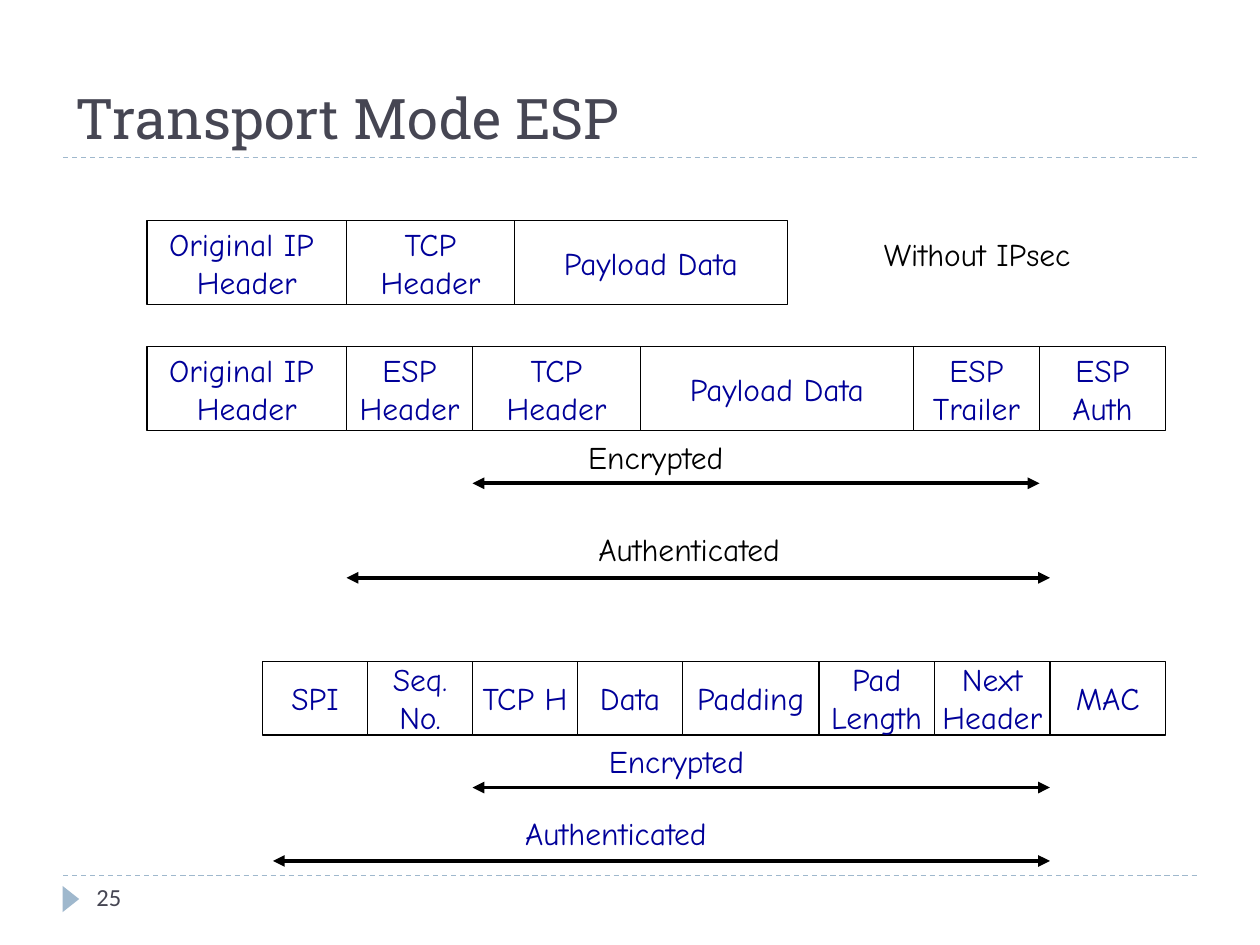
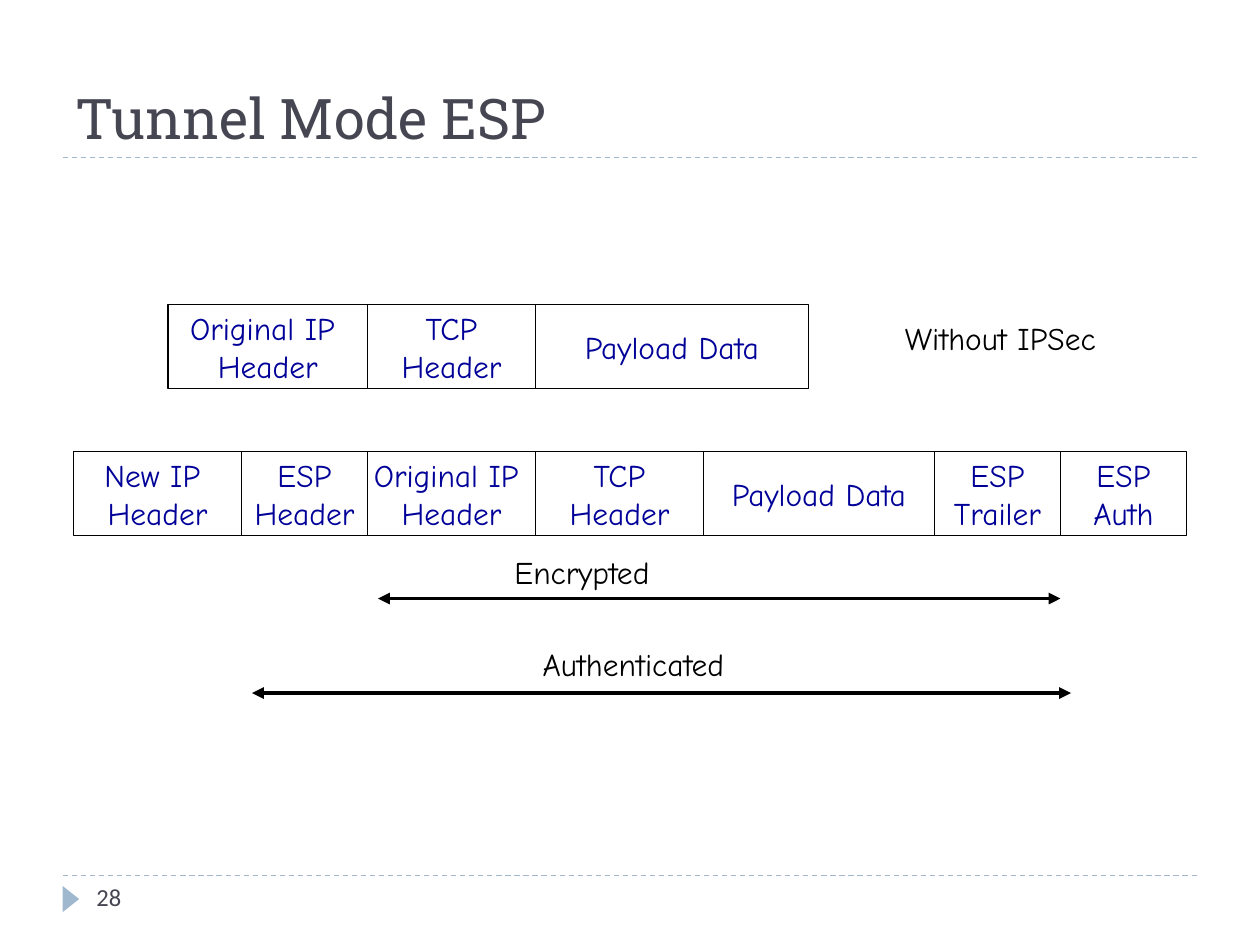
from lxml import etree
from pptx import Presentation
from pptx.dml.color import RGBColor
from pptx.enum import dml, shapes, text
from pptx.oxml import ns
from pptx.util import Pt

WHITE = RGBColor(0xFF, 0xFF, 0xFF)
BLACK = RGBColor(0x00, 0x00, 0x00)
FIELD_BLUE = RGBColor(0x00, 0x00, 0x99)
SLATE = RGBColor(0x46, 0x46, 0x53)
PALE_BLUE = RGBColor(0x9F, 0xB8, 0xCD)

TITLE_FONT = "Roboto Slab"
NUMBER_FONT = "Calibri"
BODY_FONT = "Comic Neue"

ORIGINAL_IP = "Original IP \nHeader"
TCP = "TCP\nHeader"
ESP_HEADER = "ESP\nHeader"
PAYLOAD = "Payload Data"
PLAIN_PACKET = [(ORIGINAL_IP, 114), (TCP, 96), (PAYLOAD, 156)]
ESP_END = [("ESP\nTrailer", 72), ("ESP\nAuth", 72)]

# rows: left, top, height, [(field, width)]
# labels: text, left, top, width, colour
# spans: start x, end x, y
SLIDES = [
    {
        "title": "Transport Mode ESP",
        "number": "25",
        "rows": [
            (84, 126, 48, PLAIN_PACKET),
            (84, 198, 48, [(ORIGINAL_IP, 114), (ESP_HEADER, 72), (TCP, 96),
                           (PAYLOAD, 156), *ESP_END]),
            (150, 378, 42, [("SPI", 60), ("Seq.\nNo.", 60), ("TCP H", 60),
                            ("Data", 60), ("Padding", 78), ("Pad\nLength", 66),
                            ("Next\nHeader", 66), ("MAC", 66)]),
        ],
        "labels": [
            ("Without IPsec", 498, 131, 138, BLACK),
            ("Encrypted", 329, 247, 101, BLACK),
            ("Authenticated", 334.8, 299.5, 136, BLACK),
            ("Encrypted", 340.8, 420.5, 101, FIELD_BLUE),
            ("Authenticated", 293, 461.5, 136, FIELD_BLUE),
        ],
        "spans": [(270, 594, 276.2), (198, 600, 330.2),
                  (270, 600, 450), (156, 600, 492)],
    },
    {
        "title": "Tunnel Mode ESP",
        "number": "28",
        "rows": [
            (96, 174, 48, PLAIN_PACKET),
            (42, 258, 48, [("New IP \nHeader", 96), (ESP_HEADER, 72),
                           (ORIGINAL_IP, 96), (TCP, 96), (PAYLOAD, 132),
                           *ESP_END]),
        ],
        "labels": [
            ("Without IPSec", 510, 179, 140, BLACK),
            ("Encrypted", 286.8, 312.5, 101, BLACK),
            ("Authenticated", 303, 365, 136, BLACK),
        ],
        "spans": [(216, 606, 342), (144, 612, 396)],
    },
]


def write_text(shape, content, font=BODY_FONT, size=18, colour=BLACK,
               align=text.PP_ALIGN.LEFT, anchor=text.MSO_ANCHOR.TOP, wrap=True):
    frame = shape.text_frame
    frame.text = content
    frame.word_wrap = wrap
    frame.auto_size = text.MSO_AUTO_SIZE.NONE
    frame.vertical_anchor = anchor
    for paragraph in frame.paragraphs:
        paragraph.alignment = align
        paragraph.font.name = font
        paragraph.font.size = Pt(size)
        paragraph.font.color.rgb = colour


def add_line(slide, start, end, y, colour, width):
    """Draw a horizontal line without a shadow and return its connector."""
    connector = slide.shapes.add_connector(
        shapes.MSO_CONNECTOR.STRAIGHT, Pt(start), Pt(y), Pt(end), Pt(y))
    connector.line.color.rgb = colour
    connector.line.width = Pt(width)
    etree.SubElement(connector._element.spPr, ns.qn("a:effectLst"))
    return connector


presentation = Presentation()
presentation.slide_width = Pt(720)
presentation.slide_height = Pt(540)
title_only = presentation.slide_layouts[5]

for content in SLIDES:
    slide = presentation.slides.add_slide(title_only)

    # Title, rules and page marker
    title = slide.shapes.title
    title.left, title.top, title.width, title.height = Pt(36), Pt(12), Pt(648), Pt(78)
    write_text(title, content["title"], font=TITLE_FONT, size=32, colour=SLATE,
               anchor=text.MSO_ANCHOR.BOTTOM)

    for y in (90, 500.4):
        rule = add_line(slide, 36, 684, y, PALE_BLUE, 0.75)
        rule.line.dash_style = dml.MSO_LINE.DASH

    marker = slide.shapes.add_shape(
        shapes.MSO_SHAPE.ISOSCELES_TRIANGLE, Pt(33), Pt(509), Pt(15), Pt(9.5))
    marker.rotation = 90
    marker.shadow.inherit = False
    marker.fill.solid()
    marker.fill.fore_color.rgb = PALE_BLUE
    marker.line.fill.background()

    number = slide.shapes.add_textbox(Pt(48), Pt(500.4), Pt(156), Pt(29))
    write_text(number, content["number"], font=NUMBER_FONT, size=14, colour=SLATE)

    # Packet rows: each field starts where the one before it ends
    for left, top, height, fields in content["rows"]:
        for name, width in fields:
            field = slide.shapes.add_shape(
                shapes.MSO_SHAPE.RECTANGLE, Pt(left), Pt(top), Pt(width), Pt(height))
            field.shadow.inherit = False
            field.fill.solid()
            field.fill.fore_color.rgb = WHITE
            field.line.color.rgb = BLACK
            field.line.width = Pt(1)
            write_text(field, name, colour=FIELD_BLUE, align=text.PP_ALIGN.CENTER,
                       anchor=text.MSO_ANCHOR.MIDDLE, wrap=False)
            left += width

    # Protected spans and their labels
    for start, end, y in content["spans"]:
        span = add_line(slide, start, end, y, BLACK, 2.25)
        outline = span.line._get_or_add_ln()
        for tag in ("a:headEnd", "a:tailEnd"):
            etree.SubElement(outline, ns.qn(tag), type="triangle")

    for label, left, top, width, colour in content["labels"]:
        box = slide.shapes.add_textbox(Pt(left), Pt(top), Pt(width), Pt(29))
        write_text(box, label, colour=colour)

presentation.save("out.pptx")
